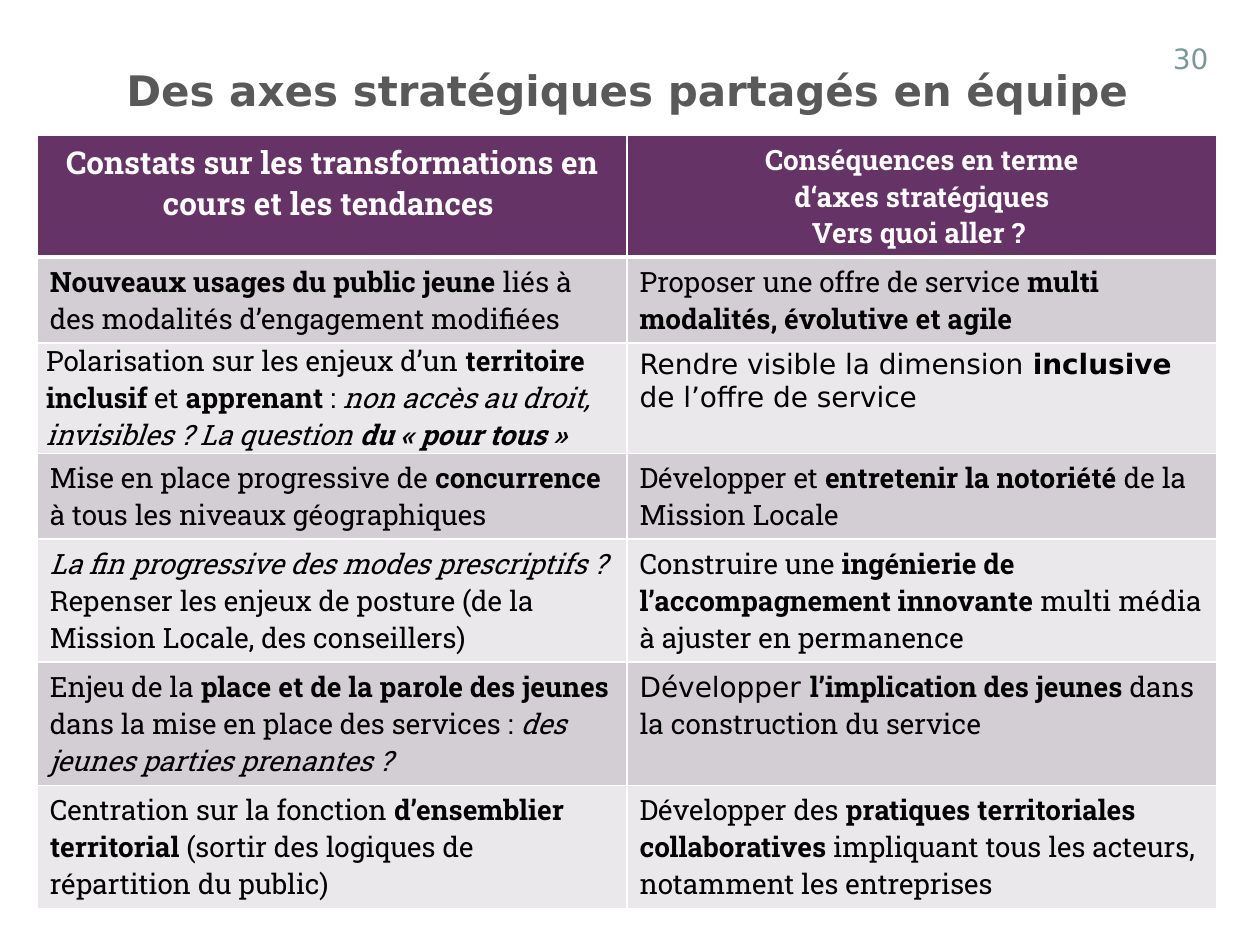
from dataclasses import dataclass
from lxml import etree
from pptx import Presentation
from pptx.dml.color import RGBColor
from pptx.enum import text
from pptx.oxml import ns
from pptx.util import Cm, Pt


@dataclass
class Theme:
    head: str = "663366"
    bands: tuple = ("D3CED3", "EAE8EA")
    white: str = "FFFFFF"
    black: str = "000000"
    title: str = "595959"
    number: str = "7B9899"
    slab: str = "Roboto Slab"
    sans: str = "DejaVu Sans"
    big: int = 24
    mid: int = 18
    small: int = 16


theme = Theme()
LEFT = text.PP_ALIGN.LEFT
MID = text.PP_ALIGN.CENTER
RIGHT = text.PP_ALIGN.RIGHT


def write(frame, lines, size=theme.small, color=theme.black, font=theme.slab, align=LEFT, bold=False):
    """Each line is a list of (words, marks): b bold, i italic, s sans."""
    frame.word_wrap = True
    for n, line in enumerate(lines):
        para = frame.paragraphs[0] if n == 0 else frame.add_paragraph()
        para.alignment = align
        for words, marks in line:
            run = para.add_run()
            run.text = words
            run.font.size = Pt(size)
            run.font.name = theme.sans if "s" in marks else font
            run.font.bold = bold or "b" in marks
            run.font.italic = "i" in marks
            run.font.color.rgb = RGBColor.from_string(color)


def edge(cell, base):
    """White borders, with the given width in points at the bottom."""
    props = cell._tc.get_or_add_tcPr()
    for n, (tag, width) in enumerate((("lnL", 1), ("lnR", 1), ("lnT", 1), ("lnB", base))):
        line = etree.Element(ns.qn("a:" + tag), w=str(Pt(width)))
        fill = etree.SubElement(line, ns.qn("a:solidFill"))
        etree.SubElement(fill, ns.qn("a:srgbClr"), val=theme.white)
        props.insert(n, line)


deck = Presentation()
deck.slide_width, deck.slide_height = Cm(25.4), Cm(19.05)
slide = deck.slides.add_slide(deck.slide_layouts[6])

# Title
box = slide.shapes.add_textbox(Cm(0.75), Cm(1.18), Cm(23.79), Cm(15.39))
write(box.text_frame, [[("Des axes stratégiques partagés en équipe", "b")]],
      size=theme.big, color=theme.title, font=theme.sans, align=MID)

# Page number
box = slide.shapes.add_textbox(Cm(23.06), Cm(0.67), Cm(1.55), Cm(1.02))
box.text_frame.vertical_anchor = text.MSO_ANCHOR.MIDDLE
write(box.text_frame, [[("30", "")]], color=theme.number, font=theme.sans, align=RIGHT)

# Table words
heads = [
    (theme.mid, ["Constats sur les transformations en cours et les tendances "]),
    (theme.small, ["Conséquences en terme", "d‘axes stratégiques", "Vers quoi aller ? "]),
]
rows = [
    ([("Nouveaux usages du public jeune", "b"),
      (" liés à des modalités d’engagement modifiées", "")],
     [("Proposer une offre de service ", ""),
      ("multi modalités, évolutive et agile", "b")]),
    ([("Polarisation sur les enjeux d’un ", ""), ("territoire inclusif", "b"),
      (" et ", ""), ("apprenant", "b"), (" : ", ""),
      ("non accès au droit, invisibles ? La question ", "i"),
      ("du « pour tous »", "bi")],
     [("Rendre visible la dimension ", "s"), ("inclusive", "sb"),
      (" de l’offre de service", "s")]),
    ([("Mise en place progressive de ", ""), ("concurrence", "b"),
      (" à tous les niveaux géographiques", "")],
     [("Développer et ", ""), ("entretenir la notoriété", "b"),
      (" de la Mission Locale", "")]),
    ([("La fin progressive des modes prescriptifs ?", "i"),
      (" Repenser les enjeux de posture (de la Mission Locale, des conseillers)", "")],
     [("Construire une ", ""), ("ingénierie de l’accompagnement innovante", "b"),
      (" multi média à ajuster en permanence", "")]),
    ([("Enjeu de la ", ""), ("place et de la parole des jeunes", "b"),
      (" dans la mise en place des services : ", ""),
      ("des jeunes parties prenantes ?", "i")],
     [("Développer ", "s"), ("l’implication des jeunes", "b"),
      (" dans la construction du service", "")]),
    ([("Centration sur la fonction ", ""), ("d’ensemblier territorial", "b"),
      (" (sortir des logiques de répartition du public)", "")],
     [("Développer des ", ""), ("pratiques territoriales collaboratives", "b"),
      (" impliquant tous les acteurs, notamment les entreprises", "")]),
]

# Table grid
talls = (2.46, 1.73, 2.23, 1.73, 2.48, 2.48, 2.48)
grid = slide.shapes.add_table(len(talls), 2, Cm(0.75), Cm(2.72), Cm(23.78), Cm(sum(talls))).table
grid.horz_banding = False
for col in grid.columns:
    col.width = Cm(11.89)
for row, tall in zip(grid.rows, talls):
    row.height = Cm(tall)

# Header row
for c, (size, lines) in enumerate(heads):
    cell = grid.cell(0, c)
    edge(cell, 3)
    cell.fill.solid()
    cell.fill.fore_color.rgb = RGBColor.from_string(theme.head)
    write(cell.text_frame, [[(line, "")] for line in lines],
          size=size, color=theme.white, align=MID, bold=True)

# Body rows in two alternating bands
for r, pair in enumerate(rows):
    for c, runs in enumerate(pair):
        cell = grid.cell(r + 1, c)
        edge(cell, 1)
        cell.fill.solid()
        cell.fill.fore_color.rgb = RGBColor.from_string(theme.bands[r % 2])
        write(cell.text_frame, [runs])

# The longest statement has tighter margins
tight = grid.cell(2, 0)
tight.margin_left = tight.margin_right = Cm(0.18)
tight.margin_top = tight.margin_bottom = 0

deck.save("out.pptx")
